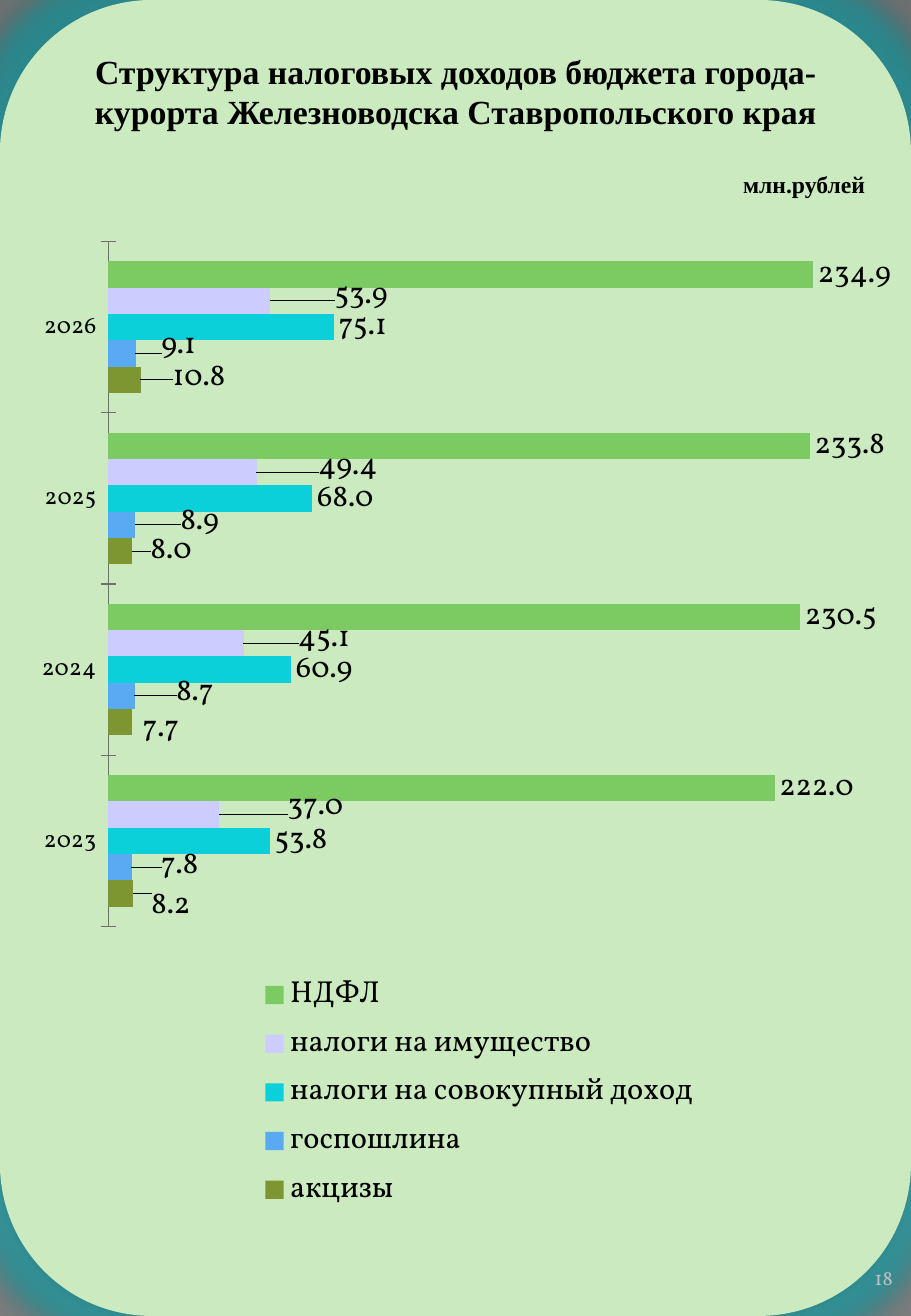
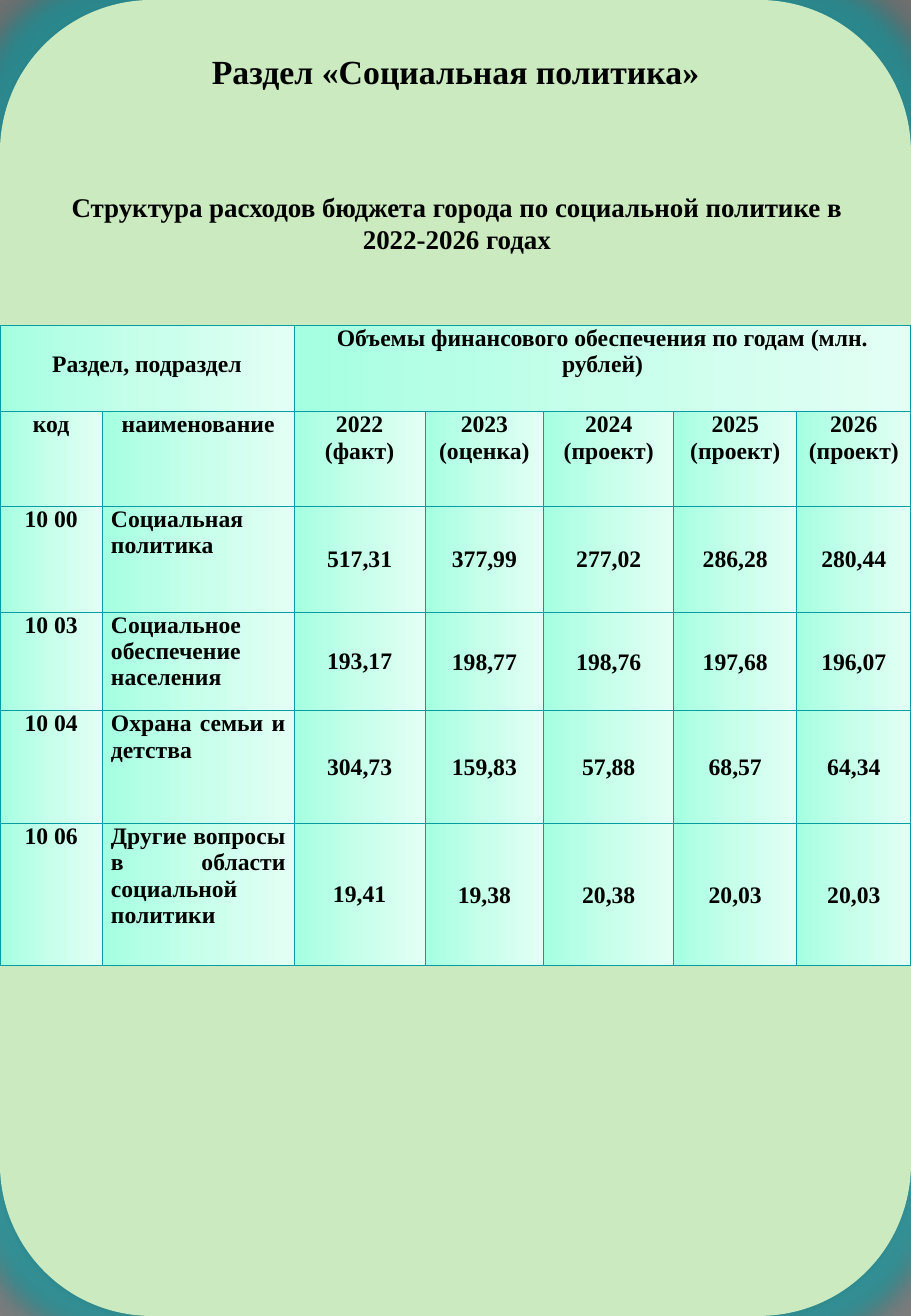
from dataclasses import dataclass

from pptx import Presentation
from pptx.chart.chart import Chart
from pptx.chart.data import CategoryChartData
from pptx.dml.color import RGBColor
from pptx.enum.chart import XL_CHART_TYPE, XL_LABEL_POSITION, XL_LEGEND_POSITION, XL_TICK_LABEL_POSITION, XL_TICK_MARK
from pptx.enum.shapes import MSO_SHAPE, PP_PLACEHOLDER
from pptx.enum.text import MSO_ANCHOR, MSO_AUTO_SIZE, PP_ALIGN
from pptx.oxml import parse_xml
from pptx.oxml.ns import nsdecls, qn
from pptx.oxml.xmlchemy import BaseOxmlElement
from pptx.presentation import Presentation as Deck
from pptx.slide import Slide, SlideLayout
from pptx.table import _Cell as Cell
from pptx.text.text import TextFrame
from pptx.util import Cm, Pt

LEFT, CENTER, RIGHT, JUSTIFY = PP_ALIGN.LEFT, PP_ALIGN.CENTER, PP_ALIGN.RIGHT, PP_ALIGN.JUSTIFY
TOP, MIDDLE, BOTTOM = MSO_ANCHOR.TOP, MSO_ANCHOR.MIDDLE, MSO_ANCHOR.BOTTOM
BAR_CLUSTERED = XL_CHART_TYPE.BAR_CLUSTERED
OUTSIDE_END = XL_LABEL_POSITION.OUTSIDE_END
LEGEND_RIGHT = XL_LEGEND_POSITION.RIGHT
TICK_CROSS = XL_TICK_MARK.CROSS
TICK_LABELS_LOW = XL_TICK_LABEL_POSITION.LOW
ROUND_RECT = MSO_SHAPE.ROUNDED_RECTANGLE
TITLE = PP_PLACEHOLDER.TITLE
NO_AUTOFIT = MSO_AUTO_SIZE.NONE

Stops = tuple[tuple[int, str], ...]


@dataclass(frozen=True)
class Theme:
    serif: str = "Times New Roman"
    chart_font: str = "Vollkorn"
    ink: str = "000000"
    panel: str = "CBEAC0"
    glow: str = "0BA5AD"
    page_number: str = "BFBFBF"
    axis: str = "707070"
    border: str = "069CA3"
    backdrop: Stops = ((0, "FFFFFF"), (25, "FFFFFF"), (100, "707070"))
    cell: Stops = ((0, "A5FFE1"), (50, "C7FFEB"), (100, "E3FFF5"))
    title_size: int = 20
    chart_size: int = 18
    subtitle_size: int = 16
    text_size: int = 14
    number_size: int = 12


@dataclass(frozen=True)
class Box:
    left: float
    top: float
    width: float
    height: float

    def lengths(self) -> tuple[Cm, Cm, Cm, Cm]:
        return Cm(self.left), Cm(self.top), Cm(self.width), Cm(self.height)


@dataclass(frozen=True)
class TextStyle:
    size: int
    font: str
    color: str
    bold: bool = True
    align: PP_ALIGN = CENTER
    anchor: MSO_ANCHOR = TOP


@dataclass(frozen=True)
class TaxSeries:
    name: str
    color: str
    values: tuple[float, ...]
    label_shifts: tuple[tuple[float, float], ...] = ()


@dataclass(frozen=True)
class ExpenseRow:
    code: str
    name: str
    amounts: tuple[str, ...]
    height: float


THEME = Theme()
PAGE = Box(0, 0, 19.05, 27.51)
TITLE_BOX = Box(0.93, 0.93, 17.2, 2.2)
TITLE_STYLE = TextStyle(THEME.title_size, THEME.serif, THEME.ink)
SUBTITLE_STYLE = TextStyle(THEME.subtitle_size, THEME.serif, THEME.ink, anchor=MIDDLE)
UNIT_STYLE = TextStyle(THEME.text_size, THEME.serif, THEME.ink, align=LEFT)
NUMBER_STYLE = TextStyle(THEME.number_size, THEME.chart_font, THEME.page_number, False, RIGHT, BOTTOM)
HEAD_STYLE = TextStyle(THEME.text_size, THEME.serif, THEME.ink)
NAME_STYLE = TextStyle(THEME.text_size, THEME.serif, THEME.ink, align=JUSTIFY)
AMOUNT_STYLE = TextStyle(THEME.text_size, THEME.serif, THEME.ink, anchor=MIDDLE)
NUMBER_FORMAT = "#,##0.0"

YEARS = ("2023", "2024", "2025", "2026")
TAXES = (
    TaxSeries("акцизы", "7E9632", (8.2, 7.7, 8, 10.8), ((1.5, 1.2), (0.7, 0.6), (1.5, 0), (3, -0.2))),
    TaxSeries("госпошлина", "59AAF2", (7.8, 8.7, 8.9, 9.1), ((2.7, -0.1), (4.1, -0.3), (4.5, -0.3), (2.3, -0.7))),
    TaxSeries("налоги на совокупный доход", "0BD0D9", (53.8, 60.9, 68, 75.1)),
    TaxSeries("налоги на имущество", "CCCCFF", (37, 45.1, 49.4, 53.9),
              ((7, -0.7), (5.5, -0.4), (6.3, -0.5), (6.6, -0.5))),
    TaxSeries("НДФЛ", "7CCA62", (222, 230.5, 233.8, 234.9)),
)

COLUMN_WIDTHS = (2.14, 4.01, 2.74, 2.48, 2.72, 2.57, 2.39)
HEAD_HEIGHTS = (1.8, 1.98)
COLUMN_HEADS = ("код", "наименование", "2022\n(факт)", "2023\n(оценка)",
                "2024 (проект)", "2025 (проект)", "2026 (проект)")
EXPENSES = (
    ExpenseRow("10 00", "Социальная политика", ("517,31", "377,99", "277,02", "286,28", "280,44"), 2.21),
    ExpenseRow("10 03", "Социальное обеспечение населения", ("193,17", "198,77", "198,76", "197,68", "196,07"), 2.06),
    ExpenseRow("10 04", "Охрана семьи и детства", ("304,73", "159,83", "57,88", "68,57", "64,34"), 2.36),
    ExpenseRow("10 06", "Другие вопросы в области социальной политики",
               ("19,41", "19,38", "20,38", "20,03", "20,03"), 2.97),
)


def rgb(color: str) -> RGBColor:
    return RGBColor.from_string(color)


def gradient(stops: Stops, direction: str) -> BaseOxmlElement:
    marks = "".join(f'<a:gs pos="{at * 1000}"><a:srgbClr val="{color}"/></a:gs>' for at, color in stops)
    return parse_xml(f'<a:gradFill {nsdecls("a")} rotWithShape="1"><a:gsLst>{marks}</a:gsLst>{direction}</a:gradFill>')


def write(frame: TextFrame, text: str, style: TextStyle, spacing: float | None = None) -> None:
    for index, line in enumerate(text.split("\n")):
        paragraph = frame.add_paragraph() if index else frame.paragraphs[0]
        paragraph.alignment = style.align
        if spacing:
            paragraph.line_spacing = spacing
        run = paragraph.add_run()
        run.text = line
        run.font.name = style.font
        run.font.size = Pt(style.size)
        run.font.bold = style.bold
        run.font.color.rgb = rgb(style.color)


def add_text(slide: Slide, box: Box, text: str, style: TextStyle, inset: bool = True) -> None:
    frame = slide.shapes.add_textbox(*box.lengths()).text_frame
    frame.word_wrap = True
    frame.vertical_anchor = style.anchor
    if not inset:
        frame.margin_left = frame.margin_right = frame.margin_top = frame.margin_bottom = 0
    write(frame, text, style)


def prepare_layout(layout: SlideLayout) -> None:
    for placeholder in list(layout.placeholders):
        if placeholder.placeholder_format.type != TITLE:
            layout.shapes.element.remove(placeholder.element)
            continue
        placeholder.left, placeholder.top, placeholder.width, placeholder.height = TITLE_BOX.lengths()
        placeholder.text_frame.vertical_anchor = TOP
        placeholder.text_frame.auto_size = NO_AUTOFIT
    layout.background.fill.solid()
    backdrop = layout.element.xpath("./p:cSld/p:bg/p:bgPr")[0]
    backdrop.remove(backdrop[0])
    backdrop.insert(0, gradient(THEME.backdrop, '<a:path path="circle"><a:fillToRect '
                                'l="10000" t="110000" r="10000" b="100000"/></a:path>'))


def move_panel_to_layout(slide: Slide, layout: SlideLayout) -> None:
    panel = slide.shapes.add_shape(ROUND_RECT, *PAGE.lengths())
    panel.fill.solid()
    panel.fill.fore_color.rgb = rgb(THEME.panel)
    panel.line.fill.background()
    panel.shadow.inherit = False
    effects = panel.element.xpath("./p:spPr/a:effectLst")[0]
    effects.append(parse_xml(f'<a:glow {nsdecls("a")} rad="{Cm(1.1)}"><a:srgbClr val="{THEME.glow}">'
                             '<a:alpha val="60000"/></a:srgbClr></a:glow>'))
    effects.append(parse_xml(f'<a:outerShdw {nsdecls("a")} blurRad="{Pt(3.5)}" dist="{Pt(2.2)}" dir="5400000">'
                             f'<a:srgbClr val="{THEME.ink}"><a:alpha val="32000"/></a:srgbClr></a:outerShdw>'))
    layout.shapes.element.insert(2, panel.element)


def add_titled_slide(deck: Deck, layout: SlideLayout, title: str) -> Slide:
    slide = deck.slides.add_slide(layout)
    write(slide.shapes.title.text_frame, title, TITLE_STYLE)
    return slide


def set_layout(parent: BaseOxmlElement, index: int, settings: dict[str, str | float]) -> None:
    for previous in parent.findall(qn("c:layout")):
        parent.remove(previous)
    values = "".join(f'<c:{key} val="{value}"/>' for key, value in settings.items())
    parent.insert(index, parse_xml(f'<c:layout {nsdecls("c")}><c:manualLayout>{values}</c:manualLayout></c:layout>'))


def style_series(chart: Chart) -> None:
    for number, (bars, tax) in enumerate(zip(chart.plots[0].series, TAXES), 1):
        bars.format.fill.solid()
        bars.format.fill.fore_color.rgb = rgb(tax.color)
        bars.invert_if_negative = False
        labels = bars.data_labels
        labels.show_value = True
        labels.number_format = NUMBER_FORMAT
        labels.number_format_is_linked = False
        labels.position = OUTSIDE_END
        for index in range(len(tax.label_shifts)):
            bars.points[index].data_label.position = OUTSIDE_END
        point_labels = chart.element.xpath(f".//c:barChart/c:ser[{number}]/c:dLbls/c:dLbl")
        for label, (right, down) in zip(point_labels, tax.label_shifts):
            set_layout(label, 1, {"x": round(right / 100, 3), "y": round(down / 100, 3)})
            label.insert(2, parse_xml(f'<c:numFmt {nsdecls("c")} formatCode="{NUMBER_FORMAT}" sourceLinked="0"/>'))


def add_tax_chart(slide: Slide) -> None:
    data = CategoryChartData(number_format=NUMBER_FORMAT)
    data.categories = YEARS
    for tax in TAXES:
        data.add_series(tax.name, tax.values)
    chart = slide.shapes.add_chart(BAR_CLUSTERED, *Box(0, 4.62, 18.9, 21.69).lengths(), data).chart
    chart.has_title = False
    chart.font.name = THEME.chart_font
    chart.font.size = Pt(THEME.chart_size)
    chart.font.color.rgb = rgb(THEME.ink)
    chart.plots[0].gap_width = 150
    chart.plots[0].overlap = 0
    chart.plots[0].vary_by_categories = False
    amounts, years = chart.value_axis, chart.category_axis
    amounts.minimum_scale, amounts.maximum_scale = 0, 250
    amounts.has_major_gridlines = False
    amounts.visible = False
    years.major_tick_mark = TICK_CROSS
    years.tick_label_position = TICK_LABELS_LOW
    years.tick_labels.font.size = Pt(THEME.text_size)
    years.format.line.color.rgb = rgb(THEME.axis)
    style_series(chart)
    chart.has_legend = True
    chart.legend.position = LEGEND_RIGHT
    chart.legend.include_in_layout = False
    edges = {"xMode": "edge", "yMode": "edge"}
    set_layout(chart.element.xpath(".//c:plotArea")[0], 0,
               {"layoutTarget": "inner", **edges, "x": 0.12, "y": 0.02, "w": 0.83, "h": 0.66})
    set_layout(chart.element.xpath(".//c:legend")[0], 1, {**edges, "x": 0.28, "y": 0.72, "w": 0.5, "h": 0.24})


def style_cell(cell: Cell, tight: bool) -> None:
    cell.margin_left = cell.margin_right = Cm(0.02 if tight else 0.18)
    cell.margin_top = Cm(0.02 if tight else 0)
    cell.margin_bottom = 0


def paint_cells(table_element: BaseOxmlElement) -> None:
    for properties in table_element.xpath(".//a:tcPr"):
        for side in ("lnL", "lnR", "lnT", "lnB"):
            properties.append(parse_xml(f'<a:{side} {nsdecls("a")} w="{Pt(0.75)}"><a:solidFill>'
                                        f'<a:srgbClr val="{THEME.border}"/></a:solidFill></a:{side}>'))
        properties.append(gradient(THEME.cell, '<a:lin ang="0" scaled="0"/>'))


def add_expense_table(slide: Slide) -> None:
    heights = (*HEAD_HEIGHTS, *(expense.height for expense in EXPENSES))
    box = Box(0, 6.81, sum(COLUMN_WIDTHS), sum(heights))
    frame = slide.shapes.add_table(len(heights), len(COLUMN_WIDTHS), *box.lengths())
    table = frame.table
    table.first_row = table.horz_banding = False
    for column, width in zip(table.columns, COLUMN_WIDTHS):
        column.width = Cm(width)
    for row, height in zip(table.rows, heights):
        row.height = Cm(height)
    for row_index in range(len(heights)):
        for column_index in range(len(COLUMN_WIDTHS)):
            style_cell(table.cell(row_index, column_index), row_index > 1 and column_index > 2)
    table.cell(0, 0).merge(table.cell(0, 1))
    table.cell(0, 2).merge(table.cell(0, 6))
    write(table.cell(0, 0).text_frame, "Раздел, подраздел", HEAD_STYLE, 2.0)
    write(table.cell(0, 2).text_frame, "Объемы финансового обеспечения по годам (млн. рублей)", HEAD_STYLE)
    for column_index, head in enumerate(COLUMN_HEADS):
        write(table.cell(1, column_index).text_frame, head, HEAD_STYLE)
    for row_index, expense in enumerate(EXPENSES, 2):
        write(table.cell(row_index, 0).text_frame, expense.code, HEAD_STYLE)
        write(table.cell(row_index, 1).text_frame, expense.name, NAME_STYLE)
        for column_index, amount in enumerate(expense.amounts, 2):
            cell = table.cell(row_index, column_index)
            cell.vertical_anchor = AMOUNT_STYLE.anchor
            write(cell.text_frame, amount, AMOUNT_STYLE)
    paint_cells(frame.element)


def main() -> None:
    deck = Presentation()
    deck.slide_width, deck.slide_height = Cm(PAGE.width), Cm(PAGE.height)
    layout = deck.slide_layouts[5]
    prepare_layout(layout)

    taxes = add_titled_slide(
        deck, layout, "Структура налоговых доходов бюджета города-курорта Железноводска Ставропольского края")
    move_panel_to_layout(taxes, layout)
    add_text(taxes, Box(17.58, 25.48, 1.09, 1.47), "18", NUMBER_STYLE, inset=False)
    add_text(taxes, Box(15.29, 3.43, 3.28, 0.86), "млн.рублей", UNIT_STYLE)
    add_tax_chart(taxes)

    expenses = add_titled_slide(deck, layout, "Раздел «Социальная политика»")
    add_text(expenses, Box(0.64, 3.84, 17.83, 1.63),
             "Структура расходов бюджета города по социальной политике в 2022-2026 годах", SUBTITLE_STYLE)
    add_expense_table(expenses)
    deck.save("out.pptx")


if __name__ == "__main__":
    main()
